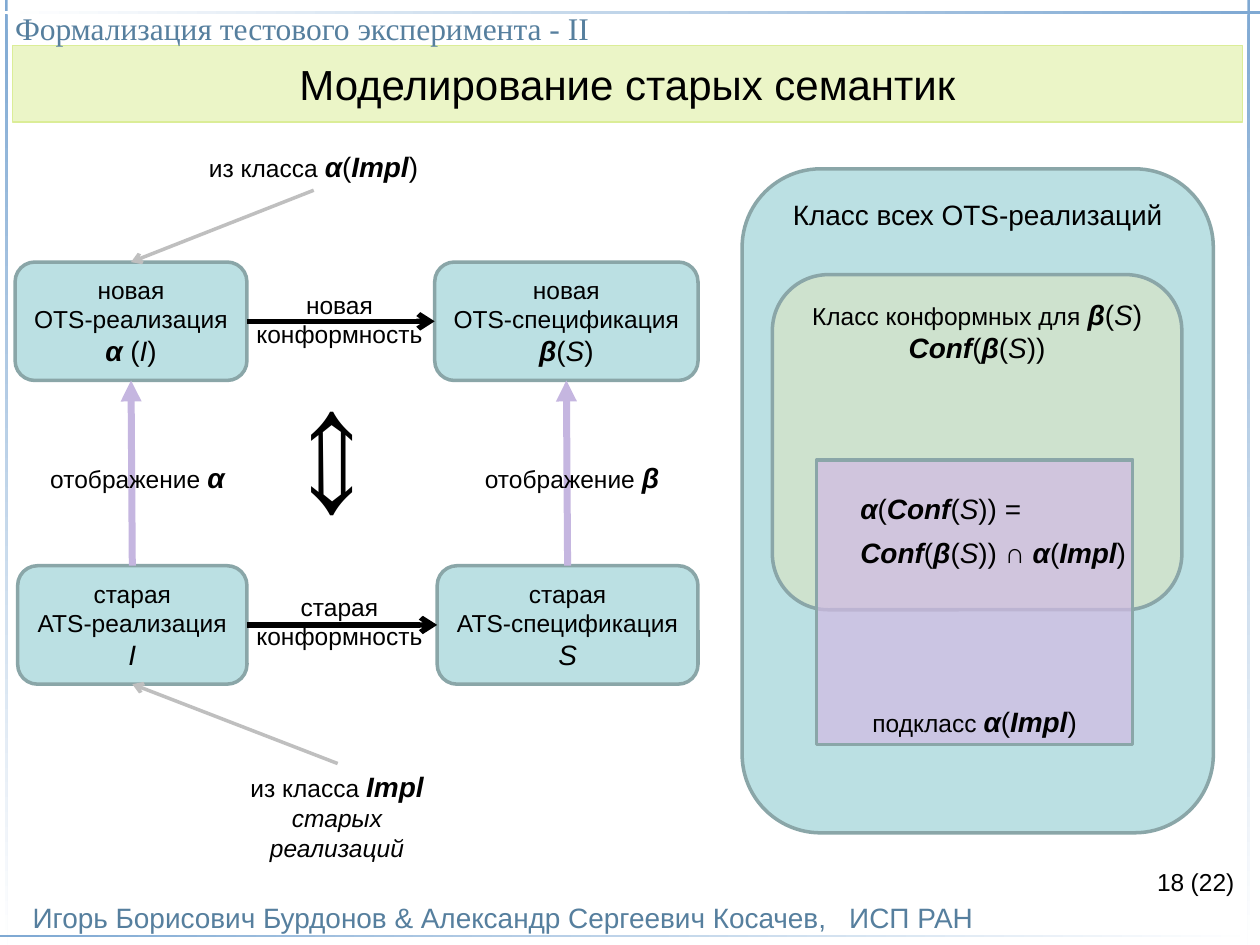
from lxml import etree
from pptx import Presentation
from pptx.dml.color import RGBColor
from pptx.enum.shapes import MSO_CONNECTOR, MSO_SHAPE
from pptx.enum.text import MSO_ANCHOR, PP_ALIGN
from pptx.oxml.ns import qn
from pptx.util import Inches, Pt

RECT, ROUND = MSO_SHAPE.RECTANGLE, MSO_SHAPE.ROUNDED_RECTANGLE
STRAIGHT = MSO_CONNECTOR.STRAIGHT
TOP, MIDDLE, BOTTOM = MSO_ANCHOR.TOP, MSO_ANCHOR.MIDDLE, MSO_ANCHOR.BOTTOM
LEFT, CENTER, RIGHT = PP_ALIGN.LEFT, PP_ALIGN.CENTER, PP_ALIGN.RIGHT

BLACK, STEEL, RULE, WHITE = "000000", "567F9E", "7FA9D3", "FFFFFF"
TEAL, EDGE, LILAC, GREY = "BBE0E3", "8AA6A8", "C5B6E0", "BFBFBF"

STYLES = {
    "word": (14, False, False),
    "slant": (14, False, True),
    "math": (16, False, False),
    "var": (16, False, True),
    "sym": (16, True, True),
    "arrow": (100, True, False),
}
OPEN, CLOSE = ("(", "math"), (")", "math")
ALPHA, BETA = ("α", "sym"), ("β", "sym")
CONF, IMPL = ("Conf", "sym"), ("Impl", "sym")
S_VAR, I_VAR = ("S", "var"), ("I", "var")
ALPHA_IMPL = [ALPHA, OPEN, IMPL, CLOSE]
BETA_S = [BETA, OPEN, S_VAR, CLOSE]
CONF_BETA_S = [CONF, OPEN, *BETA_S, CLOSE]


def words(text):
    return [(text, "word")]


RULES = [
    (0.04, 0, 0.02, 7.5, 270),
    (0, 0.09, 10, 0.02, 180),
    (0, 7.42, 10, 0.02, 0),
    (9.9, 0, 0.02, 7.5, 270),
]
CAPTIONS = [
    ("Игорь Борисович Бурдонов & Александр Сергеевич Косачев,   ИСП РАН",
     (0.26, 7.14, 8, 0.27), 16, "Arial", STEEL, LEFT, BOTTOM),
    ("Формализация тестового эксперимента - II",
     (0.12, 0.07, 9.73, 0.3), 18, "Times New Roman", STEEL, LEFT, TOP),
    ("(22)", (9.45, 6.88, 0.35, 0.24), 14, "Arial", BLACK, LEFT, TOP),
    ("18", (7.27, 6.88, 2.13, 0.24), 14, "Arial", BLACK, RIGHT, TOP),
]
BOXES = {
    "old_impl": ((0.14, 4.49, 1.82, 0.94),
                 [words("старая"), words("ATS-реализация"), [I_VAR]]),
    "old_spec": ((3.47, 4.49, 2.07, 0.94),
                 [words("старая"), words("ATS-спецификация"), [S_VAR]]),
    "new_impl": ((0.12, 2.08, 1.84, 0.94),
                 [words("новая"), words("OTS-реализация"),
                  [("α ", "sym"), OPEN, I_VAR, CLOSE]]),
    "new_spec": ((3.45, 2.08, 2.09, 0.94),
                 [words("новая"), words("OTS-спецификация"), BETA_S]),
}
LINKS = [
    ("old_impl", 3, "old_spec", 1, BLACK, 3, "arrow"),
    ("new_impl", 3, "new_spec", 1, BLACK, 3, "arrow"),
    ("old_impl", 0, "new_impl", 2, LILAC, 4, "triangle"),
    ("old_spec", 0, "new_spec", 2, LILAC, 4, "triangle"),
]
POINTERS = [((2.49, 1.51), "new_impl", 0), ((2.68, 6.06), "old_impl", 2)]
LABELS = [
    ((1.93, 4.65, 1.53, 0.57), [words("старая"), words("конформность")], CENTER),
    ((1.93, 2.25, 1.53, 0.57), [words("новая"), words("конформность")], CENTER),
    ((0.3, 3.61, 1.59, 0.37), [words("отображение ") + [ALPHA]], LEFT),
    ((3.75, 3.61, 1.6, 0.37), [words("отображение ") + [BETA]], LEFT),
    ((1.56, 1.14, 1.86, 0.37), [words("из класса ") + ALPHA_IMPL], LEFT),
    ((1.66, 6.06, 2.03, 0.6),
     [words("из класса ") + [IMPL], [("старых реализаций", "slant")]], CENTER),
]
PANELS = [
    (ROUND, (5.89, 1.34, 3.74, 5.27), TEAL, 100, TOP,
     [[("Класс всех OTS-реализаций", "math")]]),
    (ROUND, (6.13, 2.18, 3.25, 2.66), "E1E4BA", 50, TOP,
     [words("Класс конформных для ") + BETA_S, CONF_BETA_S]),
    (RECT, (6.48, 3.65, 2.51, 2.26), "D2BAE4", 70, BOTTOM,
     [words("подкласс ") + ALPHA_IMPL]),
]
EQUATION = [
    [ALPHA, OPEN, CONF, OPEN, S_VAR, (")) =", "math")],
    CONF_BETA_S + [(" ∩ ", "math")] + ALPHA_IMPL,
]


def rgb(value):
    return RGBColor.from_string(value)


def inches(values):
    return [Inches(v) for v in values]


def set_font(font, size, name="Arial", color=BLACK, bold=False, italic=False):
    font.size, font.name = Pt(size), name
    font.bold, font.italic = bold, italic
    font.color.rgb = rgb(color)


def set_margins(tf, side, edge):
    tf.margin_left = tf.margin_right = Inches(side)
    tf.margin_top = tf.margin_bottom = Inches(edge)


def write(tf, lines, align=CENTER, anchor=TOP, wrap=False):
    tf.word_wrap, tf.vertical_anchor = wrap, anchor
    for i, line in enumerate(lines):
        p = tf.paragraphs[0] if i == 0 else tf.add_paragraph()
        p.alignment = align
        for text, style in line:
            r = p.add_run()
            r.text = text
            size, bold, italic = STYLES[style]
            set_font(r.font, size, bold=bold, italic=italic)


def add_box(s, kind, at, fill, alpha=100):
    sp = s.shapes.add_shape(kind, *inches(at))
    sp.shadow.inherit = False
    sp.fill.solid()
    sp.fill.fore_color.rgb = rgb(fill)
    if alpha < 100:
        clr = sp._element.spPr.find(qn("a:solidFill"))[0]
        etree.SubElement(clr, qn("a:alpha")).set("val", str(alpha * 1000))
    sp.line.color.rgb = rgb(EDGE)
    sp.line.width = Pt(2)
    return sp


def add_arrow(s, color, width, head, end, start=None, point=(0, 0)):
    x, y = inches(point)
    c = s.shapes.add_connector(STRAIGHT, x, y, x, y)
    if start:
        c.begin_connect(*start)
    c.end_connect(*end)
    c.line.color.rgb = rgb(color)
    c.line.width = Pt(width)
    spPr = c._element.spPr
    etree.SubElement(spPr.find(qn("a:ln")), qn("a:tailEnd")).set("type", head)
    etree.SubElement(spPr, qn("a:effectLst"))


def add_label(s, at, lines, align):
    tf = s.shapes.add_textbox(*inches(at)).text_frame
    write(tf, lines, align)
    return tf


def main():
    prs = Presentation()
    prs.slide_width, prs.slide_height = Inches(10), Inches(7.5)
    s = prs.slides.add_slide(prs.slide_layouts[5])

    for *at, angle in RULES:
        sp = s.shapes.add_shape(RECT, *inches(at))
        sp.shadow.inherit = False
        sp.line.fill.background()
        sp.fill.gradient()
        sp.fill.gradient_angle = angle
        for stop, color in zip(sp.fill.gradient_stops, (RULE, WHITE)):
            stop.color.rgb = rgb(color)

    for text, at, size, name, color, align, anchor in CAPTIONS:
        tf = s.shapes.add_textbox(*inches(at)).text_frame
        set_margins(tf, 0, 0)
        tf.word_wrap, tf.vertical_anchor = True, anchor
        tf.text = text
        tf.paragraphs[0].alignment = align
        set_font(tf.paragraphs[0].runs[0].font, size, name, color)

    title = s.shapes.title
    title.left, title.top, title.width, title.height = inches((0.1, 0.36, 9.76, 0.61))
    title.fill.solid()
    title.fill.fore_color.rgb = rgb("EBF5C7")
    title.line.color.rgb = rgb("DBED97")
    title.line.width = Pt(0.75)
    tf = title.text_frame
    tf.text = "Моделирование старых семантик"
    tf.vertical_anchor = MIDDLE
    set_margins(tf, 0, 0.1)
    tf.paragraphs[0].alignment = CENTER
    set_font(tf.paragraphs[0].runs[0].font, 24)

    boxes = {}
    for key, (at, lines) in BOXES.items():
        boxes[key] = add_box(s, ROUND, at, TEAL)
        write(boxes[key].text_frame, lines, anchor=MIDDLE)
    for a, a_side, b, b_side, color, width, head in LINKS:
        add_arrow(s, color, width, head, (boxes[b], b_side), (boxes[a], a_side))
    for point, key, side in POINTERS:
        add_arrow(s, GREY, 2, "arrow", (boxes[key], side), point=point)
    for label in LABELS:
        add_label(s, *label)

    tf = s.shapes.add_textbox(*inches((1.55, 2.73, 1.88, 1.9))).text_frame
    write(tf, [[("⇔", "arrow")]], wrap=True)
    tf._txBody.bodyPr.set("vert", "vert270")

    for kind, at, fill, alpha, anchor, lines in PANELS:
        sp = add_box(s, kind, at, fill, alpha)
        set_margins(sp.text_frame, 0.04, 0.05)
        write(sp.text_frame, lines, anchor=anchor, wrap=True)
    tf = add_label(s, (6.73, 3.85, 2.32, 0.72), EQUATION, LEFT)
    tf.paragraphs[0].space_after = Pt(6)

    prs.save("out.pptx")


if __name__ == "__main__":
    main()
